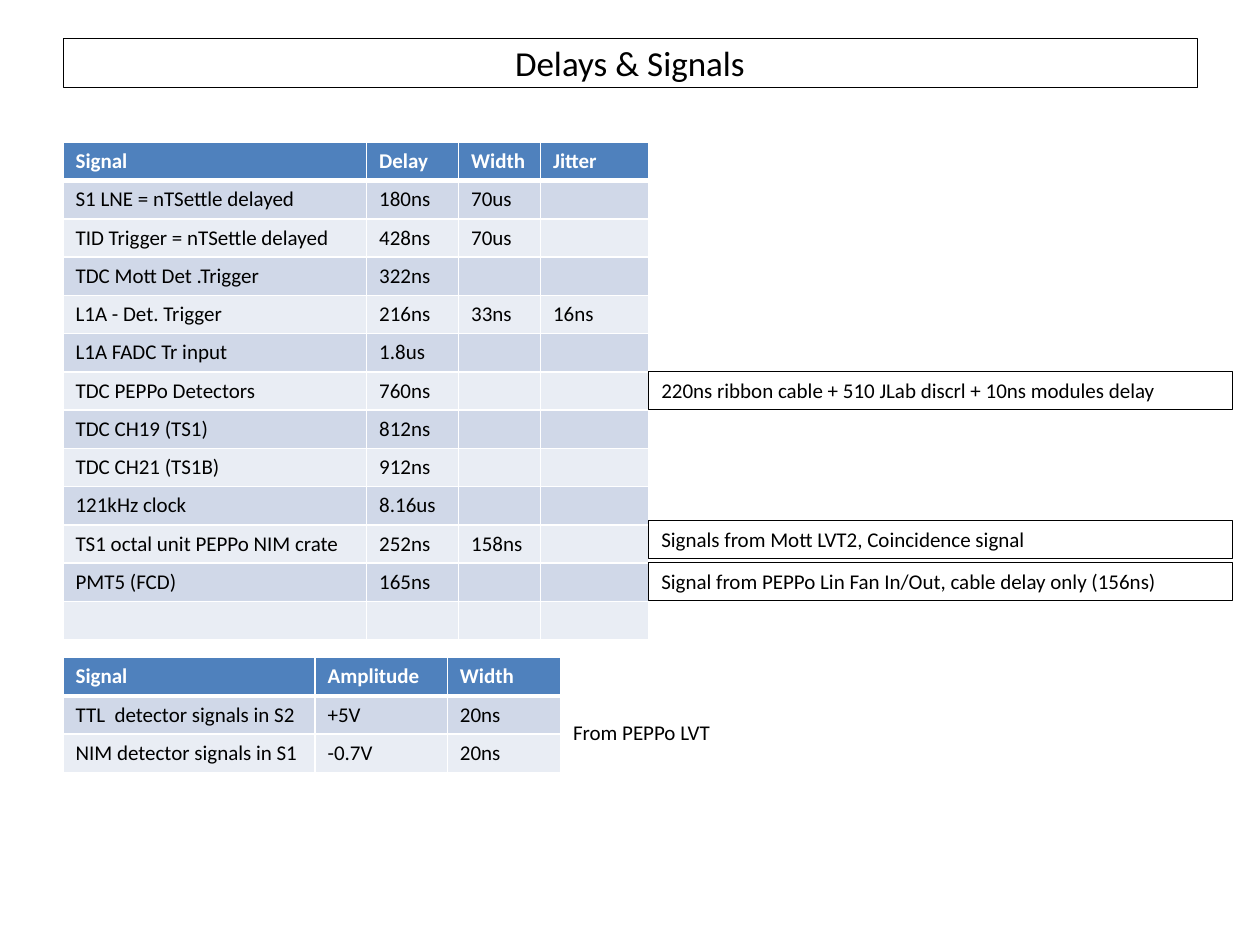
from dataclasses import dataclass

from lxml.etree import SubElement
from pptx import Presentation
from pptx.dml.color import RGBColor as RGB
from pptx.enum.shapes import MSO_SHAPE as SHAPE
from pptx.enum.text import MSO_ANCHOR as ANCHOR, PP_ALIGN as ALIGN
from pptx.oxml.ns import qn
from pptx.util import Inches, Pt


@dataclass(frozen=True)
class Theme:
    font: str = "Calibri"
    title: int = 20
    body: int = 12
    ink: str = "000000"
    paper: str = "FFFFFF"
    header: str = "4F81BD"
    bands: tuple = ("D0D8E8", "E9EDF4")
    rule: int = 1
    header_rule: int = 3


THEME = Theme()
LEFT = 0.5
ROW = 0.303
DELAY_TOP = 1.13
AMPLITUDE_TOP = 5.22
NOTE_WIDTH = 4.63
DELAY_COLS = (2.41, 0.73, 0.65, 0.86)
AMPLITUDE_COLS = (2, 1.05, 0.9)

DELAYS = [
    ("Signal", "Delay", "Width", "Jitter"),
    ("S1 LNE = nTSettle delayed", "180ns", "70us", ""),
    ("TID Trigger = nTSettle delayed", "428ns", "70us", ""),
    ("TDC Mott Det .Trigger", "322ns", "", ""),
    ("L1A - Det. Trigger", "216ns", "33ns", "16ns"),
    ("L1A FADC Tr input", "1.8us", "", ""),
    ("TDC PEPPo Detectors", "760ns", "", ""),
    ("TDC CH19 (TS1)", "812ns", "", ""),
    ("TDC CH21 (TS1B)", "912ns", "", ""),
    ("121kHz clock", "8.16us", "", ""),
    ("TS1 octal unit PEPPo NIM crate", "252ns", "158ns", ""),
    ("PMT5 (FCD)", "165ns", "", ""),
    ("", "", "", ""),
]
AMPLITUDES = [
    ("Signal", "Amplitude", "Width"),
    ("TTL  detector signals in S2", "+5V", "20ns"),
    ("NIM detector signals in S1", "-0.7V", "20ns"),
]
NOTES = [
    (6, "220ns ribbon cable + 510 JLab discrl + 10ns modules delay"),
    (9.9, "Signals from Mott LVT2, Coincidence signal"),
    (11, "Signal from PEPPo Lin Fan In/Out, cable delay only (156ns)"),
]


def write(tf, text, size=THEME.body, color=THEME.ink, bold=False):
    p = tf.paragraphs[0]
    if text:
        p.text = text
    else:
        SubElement(p._p, qn("a:endParaRPr"), sz=str(size * 100))
    p.font.name, p.font.size, p.font.bold = THEME.font, Pt(size), bold
    p.font.color.rgb = RGB.from_string(color)
    return p


def add_borders(cell, bottom):
    tc_pr = cell._tc.get_or_add_tcPr()
    for side in "LRTB":
        width = bottom if side == "B" else THEME.rule
        ln = SubElement(tc_pr, qn(f"a:ln{side}"), w=str(Pt(width)))
        SubElement(SubElement(ln, qn("a:solidFill")), qn("a:srgbClr"), val=THEME.paper)


def add_table(slide, top, widths, rows):
    frame = slide.shapes.add_table(
        len(rows), len(widths), Inches(LEFT), Inches(top),
        Inches(sum(widths)), Inches(ROW * len(rows)))
    table = frame.table
    for col, width in zip(table.columns, widths):
        col.width = Inches(width)
    for i, row in enumerate(rows):
        head = i == 0
        fill = THEME.header if head else THEME.bands[(i - 1) % 2]
        for j, text in enumerate(row):
            cell = table.cell(i, j)
            add_borders(cell, THEME.header_rule if i < 1 else THEME.rule)
            cell.fill.solid()
            cell.fill.fore_color.rgb = RGB.from_string(fill)
            write(cell.text_frame, text, color=THEME.paper if head else THEME.ink, bold=head)


def add_box(slide, left, top, width, height, text, size=THEME.body,
            line=0.75, align=ALIGN.LEFT, anchor=ANCHOR.TOP):
    sp = slide.shapes.add_shape(
        SHAPE.RECTANGLE, *map(Inches, (left, top, width, height)))
    sp.shadow.inherit = False
    sp.fill.background()
    sp.line.color.rgb = RGB.from_string(THEME.ink)
    sp.line.width = Pt(line)
    tf = sp.text_frame
    tf.word_wrap = True
    tf.vertical_anchor = anchor
    write(tf, text, size).alignment = align


def add_label(slide, left, top, width, height, text):
    box = slide.shapes.add_textbox(*map(Inches, (left, top, width, height)))
    tf = box.text_frame
    tf.word_wrap = True
    write(tf, text)


def main():
    prs = Presentation()
    prs.slide_width, prs.slide_height = Inches(10), Inches(7.5)
    slide = prs.slides.add_slide(prs.slide_layouts[6])

    add_box(slide, LEFT, 0.3, 10 - 2 * LEFT, 0.39, "Delays & Signals",
            THEME.title, 0.25, ALIGN.CENTER, ANCHOR.MIDDLE)
    add_table(slide, DELAY_TOP, DELAY_COLS, DELAYS)
    for row, text in NOTES:
        add_box(slide, LEFT + sum(DELAY_COLS), DELAY_TOP + row * ROW,
                NOTE_WIDTH, ROW, text)
    add_table(slide, AMPLITUDE_TOP, AMPLITUDE_COLS, AMPLITUDES)
    add_label(slide, LEFT + sum(AMPLITUDE_COLS), AMPLITUDE_TOP + 1.45 * ROW,
              NOTE_WIDTH, ROW, "From PEPPo LVT")
    prs.save("out.pptx")


if __name__ == "__main__":
    main()
